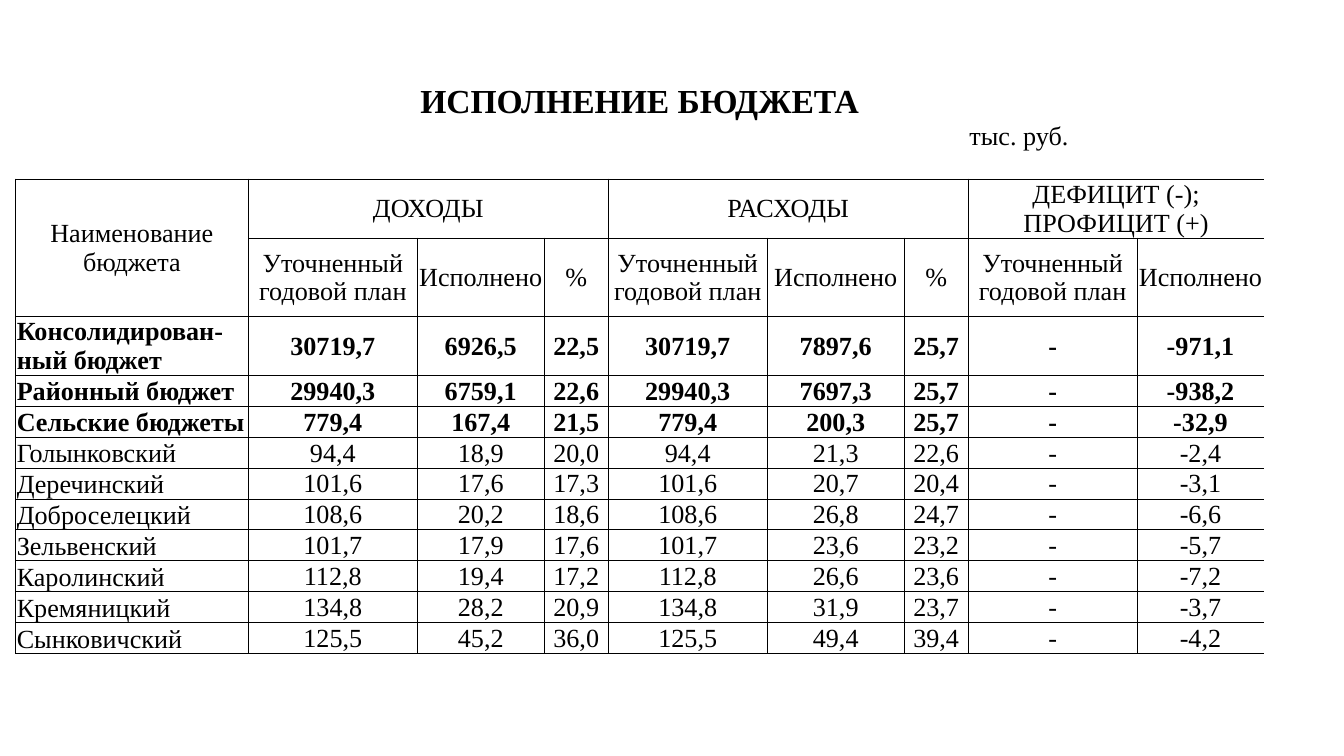
import lxml.etree
import pptx
import pptx.dml.color
import pptx.enum.text
import pptx.oxml.ns
import pptx.util

Pt = pptx.util.Pt
ANCHOR = pptx.enum.text.MSO_ANCHOR
ALIGN = pptx.enum.text.PP_ALIGN
INK = "000000"
PLAIN_STYLE = "{2D5ABB26-0587-4C30-8999-92F81FD0307C}"  # no style, no grid

COLUMN_WIDTHS = [124.8, 72.6, 17.9, 47.1, 20.9, 34.3, 85.2,
                 15, 58.4, 6.6, 27.7, 90.5, 37.2, 30.8]
UNITS_SPANS = [1, 1, 2, 2, 2, 2, 1, 2, 1]
GROUP_SPANS = [1, 5, 5, 3]
DATA_SPANS = [1, 2, 2, 1, 1, 2, 2, 1, 2]

TITLE_HEIGHT, UNITS_HEIGHT, GROUP_HEIGHT, LABEL_HEIGHT = 20.8, 31.2, 31.2, 41.8
TALL_ROW, DATA_ROW = 31.6, 16.6

GROUPS = ["Наименование\nбюджета", "ДОХОДЫ", "РАСХОДЫ", "ДЕФИЦИТ (-); ПРОФИЦИТ (+)"]
PLAN_AND_FACT = ["Уточненный годовой план", "Исполнено"]
LABELS = [""] + (PLAN_AND_FACT + ["%"]) * 2 + PLAN_AND_FACT

# name, income plan, fact, %, spending plan, fact, %, balance plan, fact
BUDGETS = [
    ["Консолидирован-ный бюджет", "30719,7", "6926,5", "22,5", "30719,7", "7897,6", "25,7", "-", "-971,1"],
    ["Районный бюджет", "29940,3", "6759,1", "22,6", "29940,3", "7697,3", "25,7", "-", "-938,2"],
    ["Сельские бюджеты", "779,4", "167,4", "21,5", "779,4", "200,3", "25,7", "-", "-32,9"],
    ["Голынковский", "94,4", "18,9", "20,0", "94,4", "21,3", "22,6", "-", "-2,4"],
    ["Деречинский", "101,6", "17,6", "17,3", "101,6", "20,7", "20,4", "-", "-3,1"],
    ["Доброселецкий", "108,6", "20,2", "18,6", "108,6", "26,8", "24,7", "-", "-6,6"],
    ["Зельвенский", "101,7", "17,9", "17,6", "101,7", "23,6", "23,2", "-", "-5,7"],
    ["Каролинский", "112,8", "19,4", "17,2", "112,8", "26,6", "23,6", "-", "-7,2"],
    ["Кремяницкий", "134,8", "28,2", "20,9", "134,8", "31,9", "23,7", "-", "-3,7"],
    ["Сынковичский", "125,5", "45,2", "36,0", "125,5", "49,4", "39,4", "-", "-4,2"],
]
BOLD_BUDGETS = 3


def color(value):
    return pptx.dml.color.RGBColor.from_string(value)


def write(cell, text, size=14, bold=False, align=ALIGN.CENTER, anchor=ANCHOR.MIDDLE):
    cell.margin_left = cell.margin_right = cell.margin_top = Pt(0.7)
    cell.margin_bottom = Pt(0)
    cell.vertical_anchor = anchor
    frame = cell.text_frame
    for index, line in enumerate(text.split("\n") if text else []):
        para = frame.paragraphs[0] if index == 0 else frame.add_paragraph()
        para.alignment = align
        span = para.add_run()
        span.text = line
        span.font.name = "Times New Roman"
        span.font.size = Pt(size)
        span.font.bold = bold
        span.font.color.rgb = color(INK)


def draw_borders(cell, sides):
    properties = cell._tc.get_or_add_tcPr()
    for side in "LRTB":
        line = lxml.etree.SubElement(properties, pptx.oxml.ns.qn("a:ln" + side), w=str(Pt(0.5)))
        if side in sides:
            fill = lxml.etree.SubElement(line, pptx.oxml.ns.qn("a:solidFill"))
            lxml.etree.SubElement(fill, pptx.oxml.ns.qn("a:srgbClr"), val=INK)
        else:
            lxml.etree.SubElement(line, pptx.oxml.ns.qn("a:noFill"))
    cell.fill.background()


def place_cell(table, row, column, height, width, text, sides="LRTB", **text_format):
    """Merge a block of cells, outline its outer edges and write its text."""
    for y in range(height):
        for x in range(width):
            edges = {"L": x == 0, "R": x == width - 1, "T": y == 0, "B": y == height - 1}
            draw_borders(table.cell(row + y, column + x),
                         [side for side in sides if edges[side]])
    first = table.cell(row, column)
    if height * width > 1:
        first.merge(table.cell(row + height - 1, column + width - 1))
    write(first, text, **text_format)


def starts(spans):
    return [sum(spans[:index]) for index in range(len(spans))]


def add_budget_table(page, left, top):
    heights = [TITLE_HEIGHT, UNITS_HEIGHT, GROUP_HEIGHT, LABEL_HEIGHT, TALL_ROW]
    heights += [DATA_ROW] * (len(BUDGETS) - 1)
    box = page.shapes.add_table(len(heights), len(COLUMN_WIDTHS), Pt(left), Pt(top),
                                Pt(sum(COLUMN_WIDTHS)), Pt(sum(heights)))
    table = box.table
    table.first_row = table.horz_banding = False
    table._tbl.tblPr.find(pptx.oxml.ns.qn("a:tableStyleId")).text = PLAIN_STYLE
    for column, width in zip(table.columns, COLUMN_WIDTHS):
        column.width = Pt(width)
    for row, height in zip(table.rows, heights):
        row.height = Pt(height)

    # Title and units
    place_cell(table, 0, 0, 1, len(COLUMN_WIDTHS), "ИСПОЛНЕНИЕ БЮДЖЕТА", sides="", size=18, bold=True)
    units = [""] * 7 + ["тыс. руб.", ""]
    for column, width, text in zip(starts(UNITS_SPANS), UNITS_SPANS, units):
        place_cell(table, 1, column, 1, width, text, sides="B", align=ALIGN.LEFT, anchor=ANCHOR.TOP)

    # Two-level header
    for column, width, text in zip(starts(GROUP_SPANS), GROUP_SPANS, GROUPS):
        place_cell(table, 2, column, 2 if column == 0 else 1, width, text)
    columns = starts(DATA_SPANS)
    for column, width, text in list(zip(columns, DATA_SPANS, LABELS))[1:]:
        place_cell(table, 3, column, 1, width, text)

    # Budgets
    for index, budget in enumerate(BUDGETS):
        for column, width, text in zip(columns, DATA_SPANS, budget):
            is_name = column == 0
            place_cell(table, 4 + index, column, 1, width, text, bold=index < BOLD_BUDGETS,
                       align=ALIGN.LEFT if is_name else ALIGN.CENTER,
                       anchor=ANCHOR.BOTTOM if is_name else ANCHOR.MIDDLE)


def main():
    deck = pptx.Presentation()
    deck.slide_width, deck.slide_height = Pt(720), Pt(405)
    page = deck.slides.add_slide(deck.slide_layouts[6])
    add_budget_table(page, 8.3, 43.9)
    deck.save("out.pptx")


if __name__ == "__main__":
    main()
